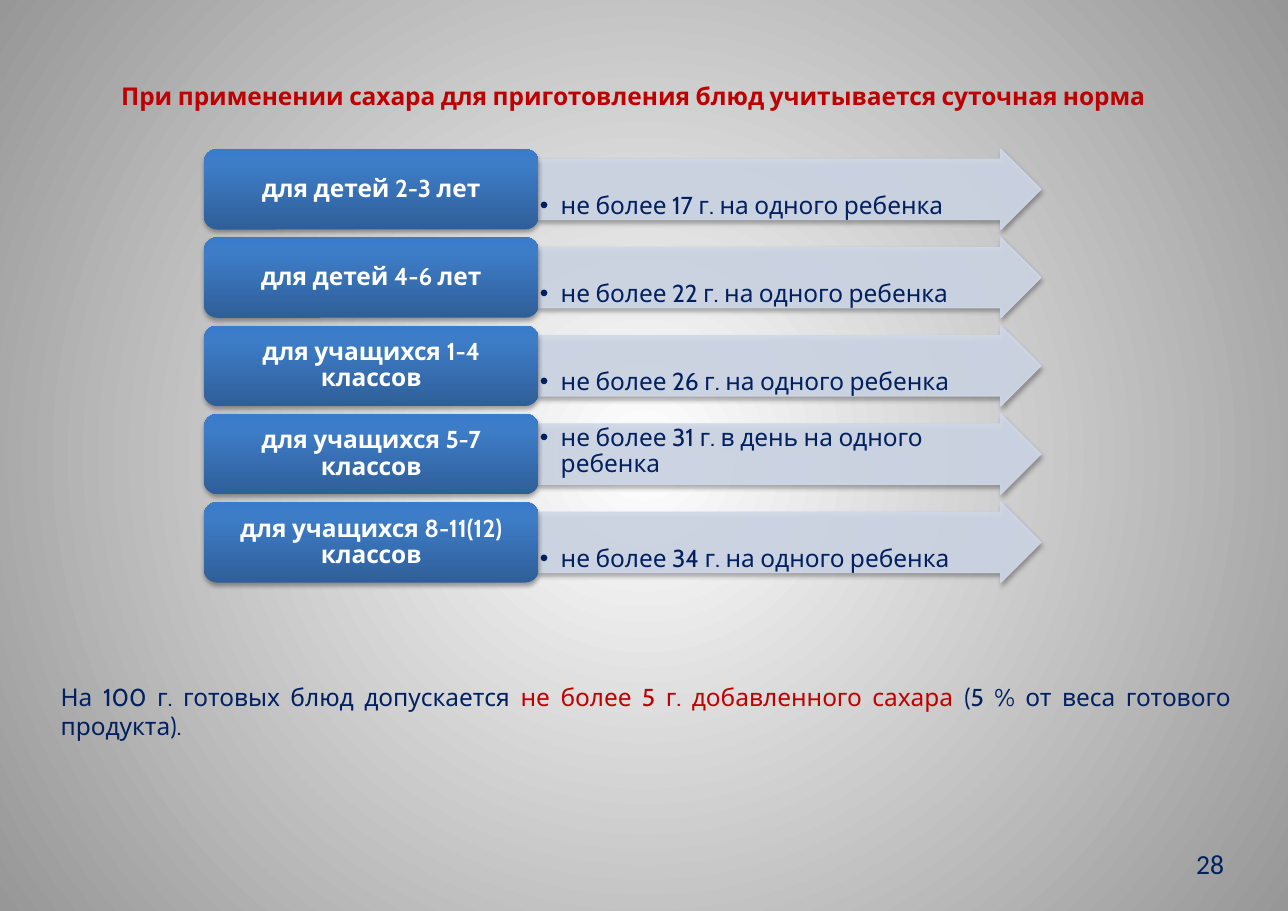
from dataclasses import dataclass
from typing import Any

from lxml.etree import SubElement
from pptx import Presentation
from pptx.dml.color import RGBColor
from pptx.enum.dml import MSO_THEME_COLOR
from pptx.enum.shapes import MSO_SHAPE
from pptx.enum.text import MSO_ANCHOR, MSO_AUTO_SIZE, PP_ALIGN
from pptx.oxml import parse_xml
from pptx.oxml.ns import nsdecls, qn
from pptx.util import Inches, Pt

NAVY = RGBColor(0x00, 0x20, 0x60)
RED = RGBColor(0xC0, 0x00, 0x00)
WHITE = RGBColor(0xFF, 0xFF, 0xFF)
GREY = RGBColor(0x97, 0x97, 0x97)
BLACK = RGBColor(0x00, 0x00, 0x00)
PALE = RGBColor(0xD0, 0xD8, 0xE8)
DEEP = RGBColor(0x2F, 0x5F, 0x99)
BLUE = RGBColor(0x3D, 0x7C, 0xC7)
BRIGHT = RGBColor(0x3A, 0x7C, 0xCB)

WIDE, HIGH = Inches(11.69), Inches(8.27)
FONT = "Cabin"
SIZE = Pt(16)


@dataclass(frozen=True)
class Box:
    """A place on the slide, in per cent of its width and height."""
    left: float
    top: float
    width: float
    height: float

    def place(self) -> tuple[int, int, int, int]:
        return (int(WIDE * self.left / 100), int(HIGH * self.top / 100),
                int(WIDE * self.width / 100), int(HIGH * self.height / 100))


@dataclass(frozen=True)
class Norm:
    group: str
    limit: str
    inset: float = 0.31


NORMS = (
    Norm("для детей 2-3 лет", "не более 17 г. на одного ребенка"),
    Norm("для детей 4-6 лет", "не более 22 г. на одного ребенка"),
    Norm("для учащихся 1-4 классов", "не более 26 г. на одного ребенка"),
    Norm("для учащихся 5-7 классов", "не более 31 г. в день на одного ребенка", 0.01),
    Norm("для учащихся 8-11(12) классов", "не более 34 г. на одного ребенка"),
)
NOTE = (
    ("На 100 г. готовых блюд допускается ", NAVY),
    ("не более 5 г. добавленного сахара ", RED),
    ("(5 % от веса готового продукта).", NAVY),
)

TITLE_BOX = Box(4.02, 6.65, 90.68, 6.77)
NOTE_BOX = Box(3.85, 74.24, 92.56, 11.37)
PAGE_BOX = Box(72.03, 92.99, 23.01, 3.63)
LEFT, TOP, STEP, TALL = 15.83, 16.36, 9.69, 8.83
GROUP_WIDE, ARROW_WIDE = 26, 39


def apply(item: Any, **values: Any) -> None:
    for name, value in values.items():
        setattr(item, name, value)


def set_place(shape: Any, box: Box) -> None:
    apply(shape, **dict(zip(("left", "top", "width", "height"), box.place())))


def set_frame(shape: Any, insets: tuple[float, ...], anchor: MSO_ANCHOR) -> Any:
    """Set insets (left, top, right, bottom, in inches); return the first paragraph."""
    frame = shape.text_frame
    sides = ("margin_left", "margin_top", "margin_right", "margin_bottom")
    apply(frame, word_wrap=True, auto_size=MSO_AUTO_SIZE.NONE, vertical_anchor=anchor,
          **{side: Inches(inset) for side, inset in zip(sides, insets)})
    return frame.paragraphs[0]


def add_run(para: Any, text: str, color: RGBColor, **values: Any) -> None:
    run = para.add_run()
    run.text = text
    apply(run.font, **{"name": FONT, "size": SIZE, "bold": False} | values)
    run.font.color.rgb = color


def gradient(stops: dict[int, RGBColor], shade: str) -> Any:
    marks = "".join(f'<a:gs pos="{pos * 1000}"><a:srgbClr val="{color}"/></a:gs>'
                    for pos, color in stops.items())
    return parse_xml(f'<a:gradFill {nsdecls("a")} rotWithShape="1">'
                     f'<a:gsLst>{marks}</a:gsLst>{shade}</a:gradFill>')


def swap_fill(props: Any, fill: Any) -> None:
    """Put fill in the place of an empty fill."""
    props.replace(props.find(qn("a:noFill")), fill)


def set_alpha(color: Any, share: int) -> None:
    SubElement(color, qn("a:alpha")).set("val", str(share * 1000))


def add_shadow(shape: Any) -> None:
    shape.shadow.inherit = False
    effects = shape._element.spPr.find(qn("a:effectLst"))
    shadow = SubElement(effects, qn("a:outerShdw"), blurRad=str(Pt(3.1)),
                        dist=str(Pt(1.8)), dir="5400000", rotWithShape="0")
    set_alpha(SubElement(shadow, qn("a:srgbClr"), val=str(BLACK)), 35)


def set_bullet(para: Any) -> None:
    props = para._p.get_or_add_pPr()
    apply_indent(props, 0.19, -0.19)
    SubElement(props, qn("a:buFont"), typeface="Arial")
    SubElement(props, qn("a:buChar"), char="•")


def apply_indent(props: Any, margin: float, indent: float) -> None:
    props.set("marL", str(Inches(margin)))
    props.set("indent", str(Inches(indent)))


def add_arrow(slide: Any, norm: Norm, top: float) -> None:
    box = Box(LEFT + GROUP_WIDE, top, ARROW_WIDE, TALL)
    arrow = slide.shapes.add_shape(MSO_SHAPE.RIGHT_ARROW, *box.place())
    arrow.adjustments[0] = 0.75
    arrow.line.width = Pt(0.75)
    arrow.fill.solid()
    for fill in (arrow.fill, arrow.line):
        color = fill.fore_color if fill is arrow.fill else fill.color
        color.rgb = PALE
    for color in list(arrow._element.spPr.iter(qn("a:srgbClr"))):
        set_alpha(color, 90)
    add_shadow(arrow)
    para = set_frame(arrow, (0.01, norm.inset, 0.2, 0.01), MSO_ANCHOR.TOP)
    apply(para, alignment=PP_ALIGN.LEFT, line_spacing=0.9)
    set_bullet(para)
    add_run(para, norm.limit, NAVY)


def add_group(slide: Any, norm: Norm, top: float) -> None:
    box = Box(LEFT, top, GROUP_WIDE, TALL)
    group = slide.shapes.add_shape(MSO_SHAPE.ROUNDED_RECTANGLE, *box.place())
    group.fill.background()
    swap_fill(group._element.spPr, gradient({0: DEEP, 80: BLUE, 100: BRIGHT},
                                            '<a:lin ang="16200000" scaled="0"/>'))
    group.line.fill.background()
    add_shadow(group)
    para = set_frame(group, (0.1, 0.06, 0.1, 0.06), MSO_ANCHOR.MIDDLE)
    apply(para, alignment=PP_ALIGN.CENTER, line_spacing=0.9)
    add_run(para, norm.group, WHITE, bold=True)


def set_back(slide: Any) -> None:
    slide.background.fill.background()
    props = slide._element.cSld.find(qn("p:bg")).find(qn("p:bgPr"))
    swap_fill(props, gradient({0: WHITE, 100: GREY}, '<a:path path="circle"><a:fillToRect '
                              'l="50000" t="50000" r="50000" b="50000"/></a:path>'))


def add_texts(slide: Any) -> None:
    title, note = slide.placeholders
    insets = (0.1, 0.05, 0.1, 0.05)

    set_place(title, TITLE_BOX)
    para = set_frame(title, insets, MSO_ANCHOR.TOP)
    apply(para, alignment=PP_ALIGN.LEFT, line_spacing=1.5)
    apply_indent(para._p.get_or_add_pPr(), 0, 0.53)
    add_run(para, "При применении сахара для приготовления блюд учитывается суточная норма",
            RED, bold=True)

    set_place(note, NOTE_BOX)
    para = set_frame(note, insets, MSO_ANCHOR.TOP)
    apply(para, alignment=PP_ALIGN.JUSTIFY, space_before=Pt(0))
    props = para._p.get_or_add_pPr()
    apply_indent(props, 0, 0)
    SubElement(props, qn("a:buNone"))
    for text, color in NOTE:
        add_run(para, text, color)

    page = slide.shapes.add_textbox(*PAGE_BOX.place())
    para = set_frame(page, (0, 0, 0, 0), MSO_ANCHOR.TOP)
    para.alignment = PP_ALIGN.RIGHT
    add_run(para, "28", NAVY, name="Calibri", size=Pt(18))


def main() -> None:
    deck = Presentation()
    apply(deck, slide_width=WIDE, slide_height=HIGH)
    slide = deck.slides.add_slide(deck.slide_layouts[1])
    set_back(slide)
    add_texts(slide)
    for row, norm in enumerate(NORMS):
        top = TOP + row * STEP
        add_arrow(slide, norm, top)
        add_group(slide, norm, top)
    deck.save("out.pptx")


if __name__ == "__main__":
    main()
